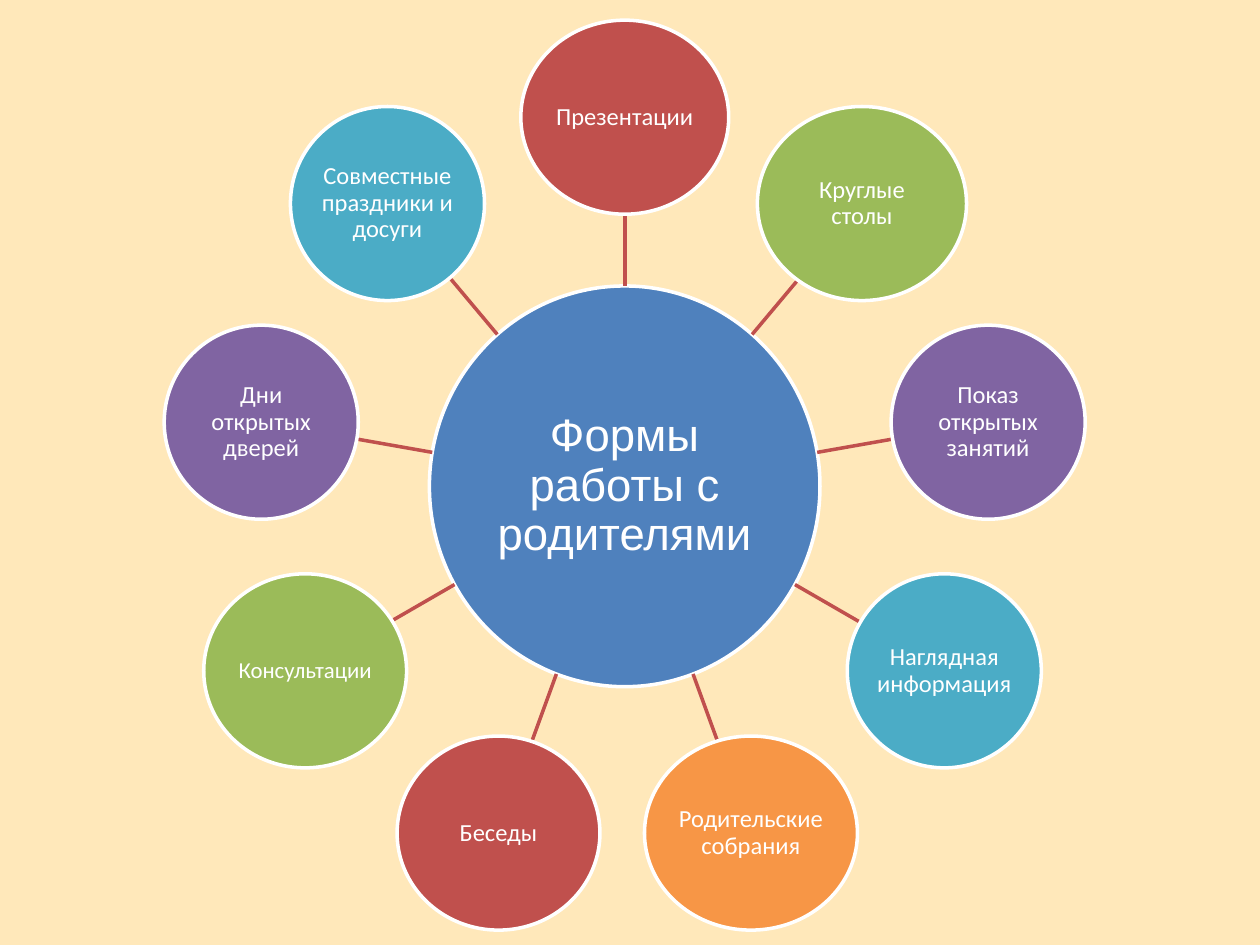
import math
from lxml import etree
from pptx import Presentation
from pptx.dml.color import RGBColor
from pptx.enum import shapes, text
from pptx.oxml.ns import qn
from pptx.util import Pt

THEME = {
    "background": "FFE8BA", "white": "FFFFFF", "blue": "4F81BD", "red": "C0504D",
    "green": "9BBB59", "purple": "8064A2", "teal": "4BACC6", "orange": "F79646",
    "hub_size": 26, "topic_size": 14, "small_size": 13,
    "hub_font": "Arial", "topic_font": "Calibri", "line": 2,
}
HUB_X, HUB_Y = 357, 277.9
HUB_W, HUB_H = 223.2, 229
ORBIT = 210.9
TOPIC_H = 110.9

# Clockwise from the top: label, colour, width, text size
TOPICS = [
    ("Презентации", "red", 118.8, "topic_size"),
    ("Круглые столы", "green", 119.5, "topic_size"),
    ("Показ открытых занятий", "purple", TOPIC_H, "topic_size"),
    ("Наглядная информация", "teal", TOPIC_H, "topic_size"),
    ("Родительские собрания", "orange", 121.7, "topic_size"),
    ("Беседы", "red", 115.9, "topic_size"),
    ("Консультации", "green", 115.9, "small_size"),
    ("Дни открытых дверей", "purple", TOPIC_H, "topic_size"),
    ("Совместные праздники и досуги", "teal", TOPIC_H, "topic_size"),
]


def rgb(name):
    return RGBColor.from_string(THEME[name])


def add_circle(group, label, x, y, w, h, color, font, size, inset):
    """Add a labelled ellipse centred on x, y."""
    sp = group.shapes.add_shape(shapes.MSO_SHAPE.OVAL, Pt(x - w / 2), Pt(y - h / 2), Pt(w), Pt(h))
    sp.shadow.inherit = False
    sp.fill.solid()
    sp.fill.fore_color.rgb = rgb(color)
    sp.line.color.rgb = rgb("white")
    sp.line.width = Pt(THEME["line"])
    tf = sp.text_frame
    tf.word_wrap = True
    tf.vertical_anchor = text.MSO_ANCHOR.MIDDLE
    tf.margin_left = tf.margin_right = tf.margin_top = tf.margin_bottom = Pt(inset)
    p = tf.paragraphs[0]
    p.text = label
    p.alignment = text.PP_ALIGN.CENTER
    p.line_spacing = 0.9
    p.font.name = THEME[font]
    p.font.size = Pt(THEME[size])
    p.font.color.rgb = rgb("white")


prs = Presentation()
prs.slide_width, prs.slide_height = Pt(720), Pt(540)
s = prs.slides.add_slide(prs.slide_layouts[6])
s.background.fill.solid()
s.background.fill.fore_color.rgb = rgb("background")

diagram = s.shapes.add_group_shape()
add_circle(diagram, "Формы работы с родителями", HUB_X, HUB_Y, HUB_W, HUB_H,
           "blue", "hub_font", "hub_size", 1.44)

for i, (label, color, width, size) in enumerate(TOPICS):
    angle = math.radians(i * 360 / len(TOPICS))
    dx, dy = math.sin(angle), -math.cos(angle)
    # Each spoke runs from the hub's edge to the topic's edge
    start = 1 / math.hypot(dx / (HUB_W / 2), dy / (HUB_H / 2))
    end = ORBIT - 1 / math.hypot(dx / (width / 2), dy / (TOPIC_H / 2))
    spoke = diagram.shapes.add_connector(
        shapes.MSO_CONNECTOR.STRAIGHT,
        Pt(HUB_X + start * dx), Pt(HUB_Y + start * dy),
        Pt(HUB_X + end * dx), Pt(HUB_Y + end * dy))
    spoke.line.color.rgb = rgb("red")
    spoke.line.width = Pt(THEME["line"])
    etree.SubElement(spoke._element.spPr, qn("a:effectLst"))
    add_circle(diagram, label, HUB_X + ORBIT * dx, HUB_Y + ORBIT * dy, width, TOPIC_H,
               color, "topic_font", size, 0.72)

prs.save("out.pptx")
